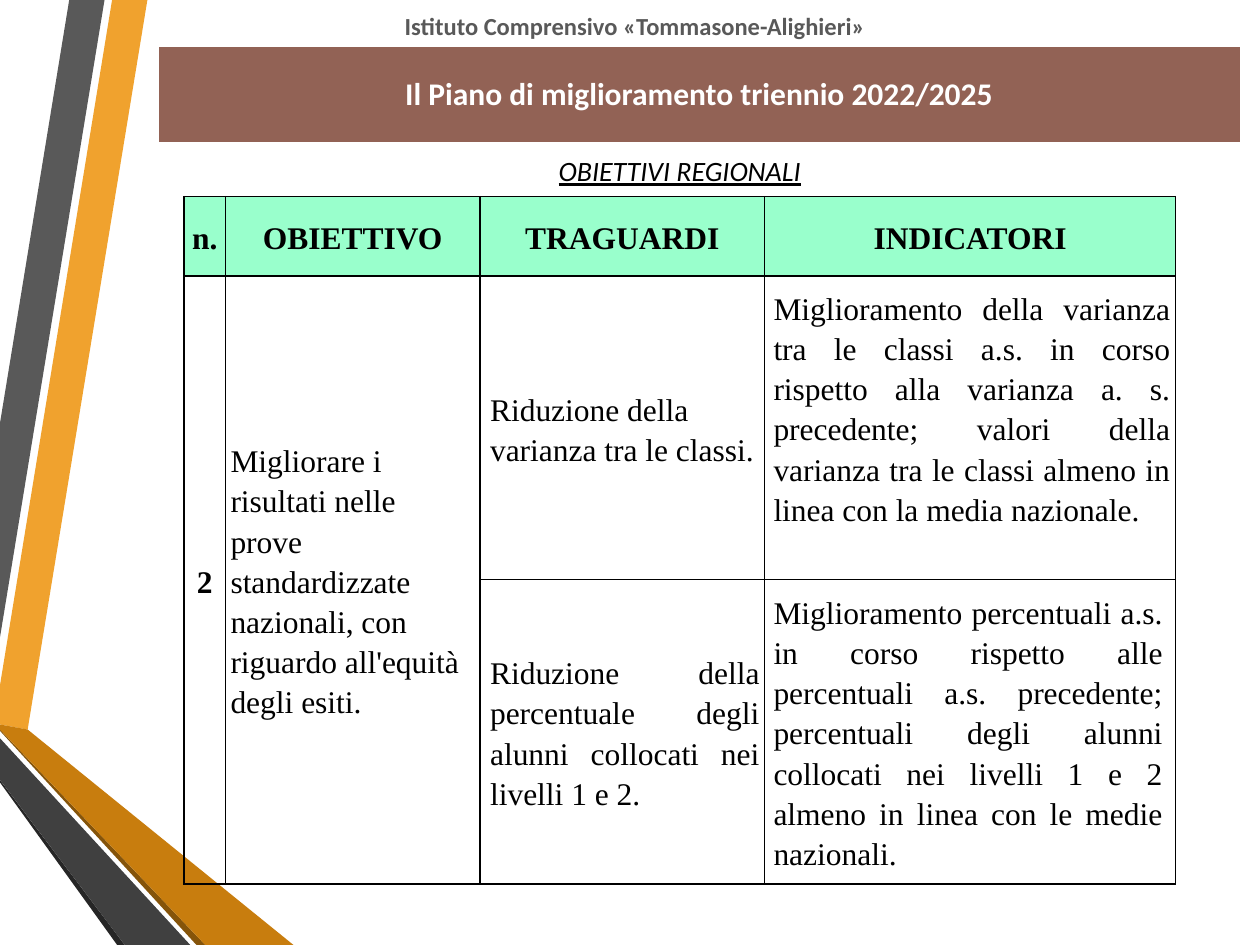
from lxml import etree
from pptx import Presentation
from pptx.dml.color import RGBColor
from pptx.enum.text import MSO_ANCHOR, PP_ALIGN
from pptx.oxml.ns import qn
from pptx.util import Inches, Pt

LEFT, CENTER, JUSTIFY = PP_ALIGN.LEFT, PP_ALIGN.CENTER, PP_ALIGN.JUSTIFY
MIDDLE = MSO_ANCHOR.MIDDLE
BLANK_LAYOUT = 6
NO_STYLE = "{2D5ABB26-0587-4C30-8999-92F81FD0307C}"
SERIF = "Times New Roman"
BLACK, WHITE, GRAY = "000000", "FFFFFF", "595959"
HEADER_GREEN, TITLE_BROWN = "99FFCC", "926255"

# Ribbons on the left side, back to front: colour and corner points
RIBBONS = [
    ("F0A22E", [(0, 5.44), (0, 5.75), (0.22, 5.79), (1.17, 0), (0.89, 0)]),
    (GRAY, [(0.83, 0), (0.55, 0), (0, 3.36), (0, 5.06)]),
    ("262626", [(0, 6.19), (0, 6.21), (0.93, 7.5), (0.99, 7.5)]),
    ("85540A", [(0, 5.79), (0, 5.8), (1.56, 7.5), (1.63, 7.5)]),
    ("C87D0E", [(0, 5.79), (1.63, 7.5), (2.33, 7.5), (0.22, 5.79), (0, 5.75)]),
    ("404040", [(0, 6.19), (0.99, 7.5), (1.51, 7.5), (0, 5.86)]),
]

HEADERS = ["n.", "OBIETTIVO", "TRAGUARDI", "INDICATORI"]
COLUMN_WIDTHS = [0.33, 2.02, 2.26, 3.26]
ROW_HEIGHTS = [0.63, 2.41, 2.41]

# Body cells: row, column, text, format
BODY = [
    (1, 0, "2", dict(align=CENTER, bold=True)),
    (1, 1, "Migliorare i risultati nelle prove standardizzate nazionali, "
           "con riguardo all'equità degli esiti.", {}),
    (1, 2, "Riduzione della varianza tra le classi.", dict(indent=0.04)),
    (1, 3, "Miglioramento della varianza tra le classi a.s. in corso rispetto "
           "alla varianza a. s. precedente; valori della varianza tra le classi "
           "almeno in linea con la media nazionale.",
     dict(align=JUSTIFY, indent=0.03)),
    (2, 2, "Riduzione della percentuale degli alunni collocati nei livelli 1 e 2.",
     dict(align=JUSTIFY, indent=0.04)),
    (2, 3, "Miglioramento percentuali a.s. in corso rispetto alle percentuali a.s. "
           "precedente; percentuali degli alunni collocati nei livelli 1 e 2 almeno "
           "in linea con le medie nazionali.",
     dict(align=JUSTIFY, indent=0.03, right_indent=0.06)),
]


def color(hex_string):
    return RGBColor.from_string(hex_string)


def write_text(frame, text, font="Calibri", size=18, ink=BLACK, bold=False,
               italic=False, underline=False, align=LEFT, spacing=None,
               indent=0, right_indent=0):
    frame.word_wrap = True
    paragraph = frame.paragraphs[0]
    paragraph.alignment = align
    if spacing:
        paragraph.line_spacing = spacing
    properties = paragraph._p.get_or_add_pPr()
    properties.set("marL", str(Inches(indent)))
    properties.set("marR", str(Inches(right_indent)))
    run = paragraph.add_run()
    run.text = text
    run.font.name = font
    run.font.size = Pt(size)
    run.font.bold = bold
    run.font.italic = italic
    run.font.underline = underline
    run.font.color.rgb = color(ink)


def add_text(slide, left, top, width, height, text, **text_format):
    box = slide.shapes.add_textbox(
        Inches(left), Inches(top), Inches(width), Inches(height))
    write_text(box.text_frame, text, **text_format)


def add_ribbon(slide, fill, points):
    corners = [(Inches(x), Inches(y)) for x, y in points]
    builder = slide.shapes.build_freeform(*corners[0])
    builder.add_line_segments(corners[1:], close=True)
    shape = builder.convert_to_shape()
    shape.shadow.inherit = False
    shape.fill.solid()
    shape.fill.fore_color.rgb = color(fill)
    shape.line.fill.background()


def add_plain_table(slide, left, top, widths, heights):
    table = slide.shapes.add_table(
        len(heights), len(widths), Inches(left), Inches(top),
        Inches(sum(widths)), Inches(sum(heights))).table
    table.first_row = False
    table.horz_banding = False
    table._tbl.tblPr.find(qn("a:tableStyleId")).text = NO_STYLE
    for column, width in zip(table.columns, widths):
        column.width = Inches(width)
    for row, height in zip(table.rows, heights):
        row.height = Inches(height)
    return table


def set_borders(cell, ink=BLACK, width=1):
    properties = cell._tc.get_or_add_tcPr()
    for side in ("lnL", "lnR", "lnT", "lnB"):
        line = etree.SubElement(properties, qn(f"a:{side}"), w=str(Pt(width)))
        fill = etree.SubElement(line, qn("a:solidFill"))
        etree.SubElement(fill, qn("a:srgbClr"), val=ink)


def fill_cell(cell, fill):
    cell.fill.solid()
    cell.fill.fore_color.rgb = color(fill)


def add_goals_table(slide):
    table = add_plain_table(slide, 1.46, 1.56, COLUMN_WIDTHS, ROW_HEIGHTS)
    for cell in table.iter_cells():
        cell.vertical_anchor = MIDDLE
        cell.margin_left = cell.margin_right = Inches(0.04)
        cell.margin_top = cell.margin_bottom = 0
        set_borders(cell)
        cell.fill.background()
    for column in (0, 1):
        table.cell(1, column).merge(table.cell(2, column))

    # Header row
    for column, header in enumerate(HEADERS):
        cell = table.cell(0, column)
        fill_cell(cell, HEADER_GREEN)
        write_text(cell.text_frame, header, font=SERIF, bold=True,
                   align=CENTER, spacing=1.15)

    # Body rows
    for row, column, text, text_format in BODY:
        write_text(table.cell(row, column).text_frame, text, font=SERIF,
                   spacing=1.15, **text_format)
    # The first indicator sits one line higher than the middle
    table.cell(1, 3).margin_bottom = Inches(0.32)


def add_title_band(slide):
    cell = add_plain_table(slide, 1.26, 0.37, [8.58], [0.76]).cell(0, 0)
    cell.vertical_anchor = MIDDLE
    fill_cell(cell, TITLE_BROWN)
    write_text(cell.text_frame, "Il Piano di miglioramento triennio 2022/2025",
               ink=WHITE, bold=True, align=CENTER)


def main():
    presentation = Presentation()
    presentation.slide_width = Inches(10)
    presentation.slide_height = Inches(7.5)
    slide = presentation.slides.add_slide(presentation.slide_layouts[BLANK_LAYOUT])

    for fill, points in RIBBONS:
        add_ribbon(slide, fill, points)
    add_text(slide, 1.3, 1.17, 8.19, 0.37, "OBIETTIVI REGIONALI",
             size=16, italic=True, underline=True, align=CENTER)
    add_text(slide, 1.14, 0.04, 7.8, 0.34,
             "Istituto Comprensivo «Tommasone-Alighieri»",
             size=14, ink=GRAY, bold=True, align=CENTER)
    add_goals_table(slide)
    add_title_band(slide)

    presentation.save("out.pptx")


if __name__ == "__main__":
    main()
